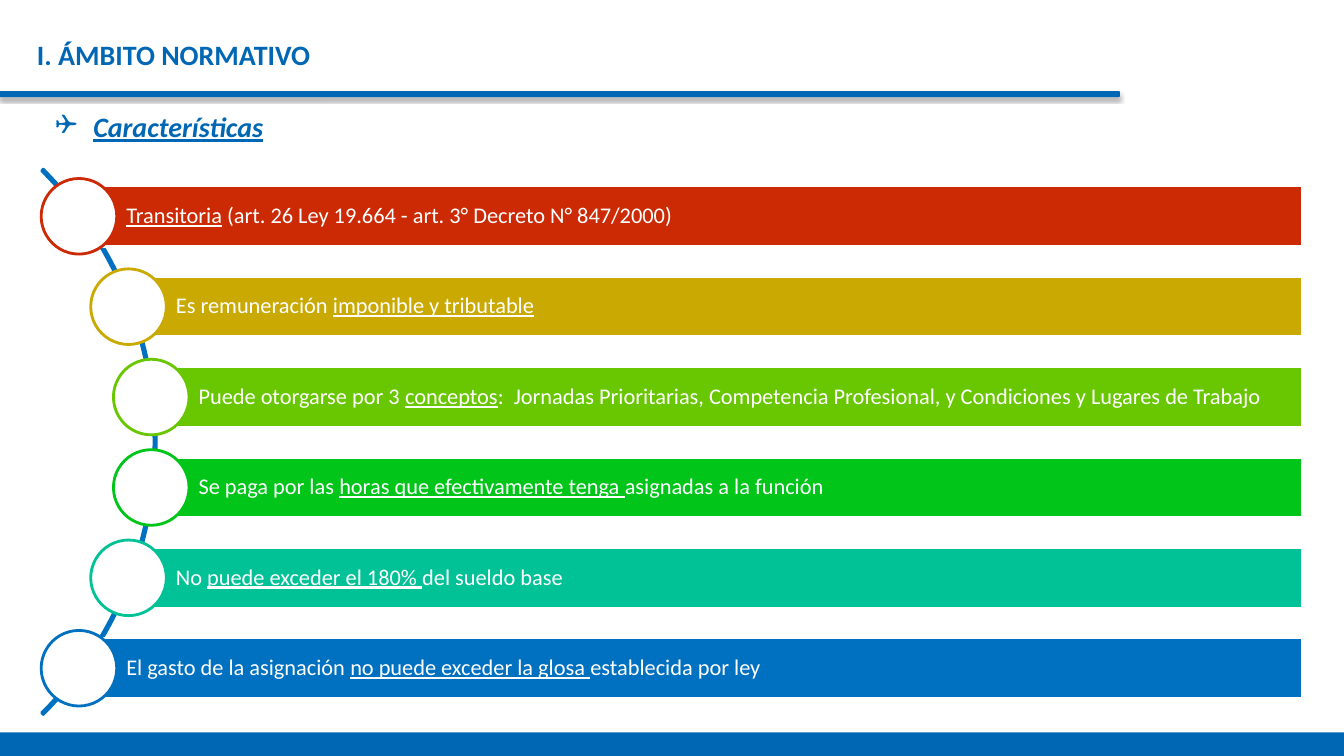
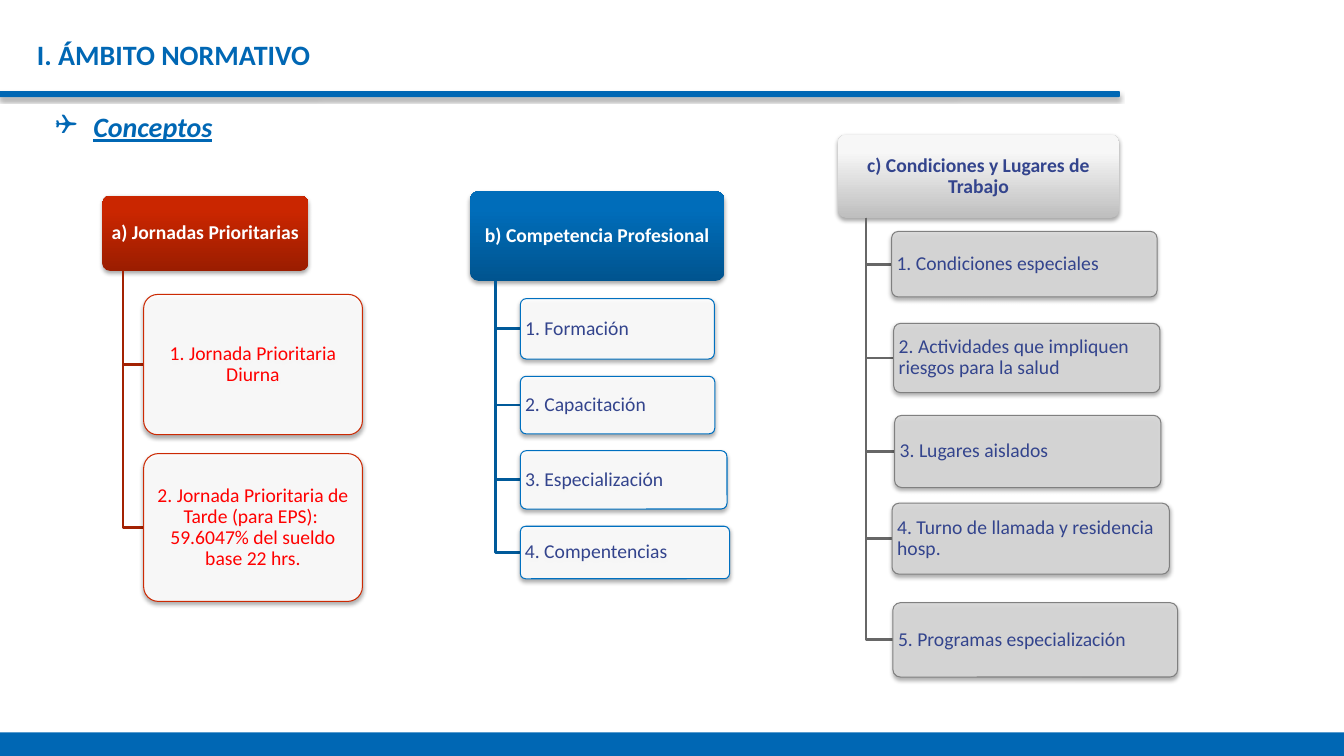
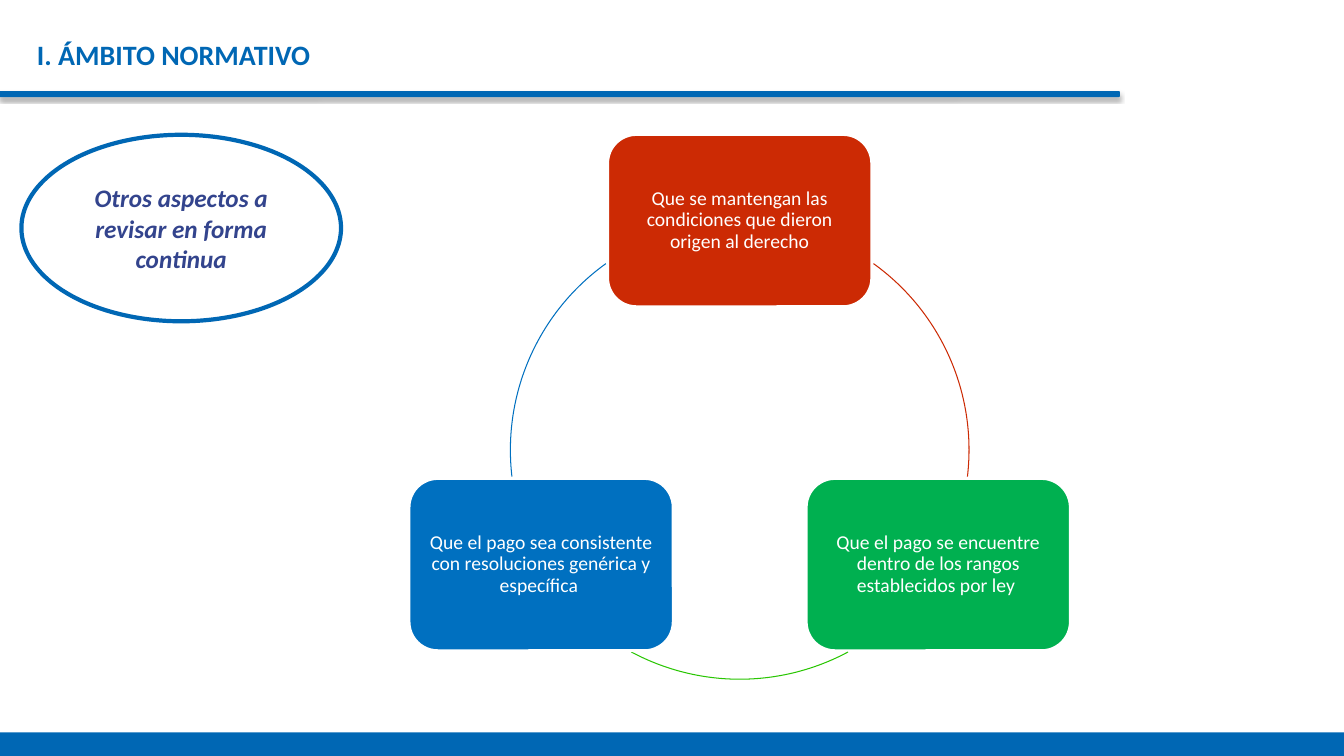
"""Build three slides on the legal framework of an allowance."""
from math import cos, radians, sin

from pptx import Presentation
from pptx.dml.color import RGBColor
from pptx.enum.shapes import MSO_SHAPE
from pptx.enum.text import MSO_ANCHOR, PP_ALIGN
from pptx.oxml import parse_xml
from pptx.oxml.ns import nsdecls, qn
from pptx.util import Inches, Pt

RECT, ROUNDED, OVAL = MSO_SHAPE.RECTANGLE, MSO_SHAPE.ROUNDED_RECTANGLE, MSO_SHAPE.OVAL
ARC, BLOCK_ARC = MSO_SHAPE.ARC, MSO_SHAPE.BLOCK_ARC
LEFT, CENTER = PP_ALIGN.LEFT, PP_ALIGN.CENTER
MIDDLE = MSO_ANCHOR.MIDDLE

COLUMNS, ROWS = 160, 90
CELL = Inches(1 / 12)
BRAND, BLUE, RED, INDIGO, WHITE = "0067B4", "0070C0", "CC2A04", "33448D", "FFFFFF"
ARC_UNIT = 0.6
HEADING = {"size": Pt(20), "bold": True}
SHADOW = (
    f'<a:outerShdw {nsdecls("a")} blurRad="39370" dist="22860" dir="5400000" rotWithShape="0">'
    '<a:srgbClr val="000000"><a:alpha val="35000"/></a:srgbClr></a:outerShdw>'
)


def paint(fill, color):
    if color is None:
        fill.background()
    elif isinstance(color, tuple):
        fill.gradient()
        fill.gradient_angle = 90
        for stop, position, shade in zip(fill.gradient_stops, (0, 0.8), color):
            stop.position = position
            stop.color.rgb = RGBColor.from_string(shade)
    else:
        fill.solid()
        fill.fore_color.rgb = RGBColor.from_string(color)


def block(slide, kind, area, fill=None, line=None, weight=2, adjust=(), shadow=False, opacity=100,
          text="", ink=WHITE, align=LEFT, insets=(0, 0, 0, 0), spacing=0.9, **fmt):
    place = [round(cells * CELL) for cells in area]
    shape = slide.shapes.add_shape(kind, *place) if kind else slide.shapes.add_textbox(*place)
    for index, value in enumerate(adjust):
        shape.adjustments[index] = value
    paint(shape.fill, fill)
    paint(shape.line.fill, line)
    if line:
        shape.line.width = Pt(weight)
    properties = shape._element.spPr
    if opacity < 100:
        tint = properties.find(qn("a:solidFill"))[0]
        tint.append(parse_xml(f'<a:alpha {nsdecls("a")} val="{opacity * 1000}"/>'))
    shape.shadow.inherit = False
    if shadow:
        properties.find(qn("a:effectLst")).append(parse_xml(SHADOW))
    if not text:
        return shape
    frame = shape.text_frame
    frame.word_wrap = True
    frame.vertical_anchor = MIDDLE
    for side, inset in zip(("left", "top", "right", "bottom"), insets):
        setattr(frame, f"margin_{side}", Inches(inset))
    paragraph = frame.paragraphs[0]
    paragraph.alignment = align
    paragraph.line_spacing = spacing
    for index, piece in enumerate(text.split("_")):
        if piece:
            run = paragraph.add_run()
            run.text = piece
            for name, value in {"name": "Calibri", "size": Pt(14), **fmt}.items():
                setattr(run.font, name, value)
            if index % 2:
                run.font.underline = True
            paint(run.font.fill, ink)
    return shape


deck = Presentation()
deck.slide_width, deck.slide_height = COLUMNS * CELL, ROWS * CELL
blank = deck.slide_layouts[6]

slides = []
for topic in ("Características", "Conceptos", None):
    slide = deck.slides.add_slide(blank)
    slides.append(slide)
    block(slide, ROUNDED, (0, 10.9, 133.25, 0.6), BRAND, BRAND, 0.75, (0.12,), shadow=True)
    block(slide, RECT, (0, 87.2, COLUMNS, 2.8), BRAND)
    block(slide, None, (4.4, 4.4, 133.6, 4.1), text="I. ÁMBITO NORMATIVO", ink=BRAND,
          spacing=1.0, **HEADING)
    if topic:
        heading = block(slide, None, (6.55, 13, 133.6, 4.1), text=f"_{topic}_", ink=BRAND,
                        spacing=1.0, italic=True, **HEADING)
        bullet = heading.text_frame.paragraphs[0]._p.get_or_add_pPr()
        bullet.set("marL", str(Inches(0.38)))
        bullet.set("indent", str(-Inches(0.38)))
        bullet.append(parse_xml(f'<a:buFont {nsdecls("a")} typeface="Wingdings" charset="2"/>'))
        bullet.append(parse_xml(f'<a:buChar {nsdecls("a")} char="❑"/>'))

features_slide, concepts_slide, review_slide = slides

FEATURES = [
    (9.4, RED, "_Transitoria_ (art. 26 Ley 19.664 - art. 3° Decreto N° 847/2000)"),
    (15.3, "CAA903", "Es remuneración _imponible y tributable_"),
    (18, "69C702", "Puede otorgarse por 3 _conceptos_:  Jornadas Prioritarias, "
                   "Competencia Profesional, y Condiciones y Lugares de Trabajo"),
    (18, "02C51A", "Se paga por las _horas que efectivamente tenga _asignadas a la función"),
    (15.3, "01C296", "No _puede exceder el 180% _del sueldo base"),
    (9.4, BLUE, "El gasto de la asignación _no puede exceder la glosa _establecida por ley"),
]
BAR_RIGHT, BAR_HEIGHT, BAR_PITCH, CIRCLE = 155.1, 7.2, 10.76, 9
block(features_slide, BLOCK_ARC, (-73.2, 6.7, 91.8, 91.8), line=BLUE,
      adjust=(315 * ARC_UNIT, 45 * ARC_UNIT, 0.003))
for index, (left, color, feature) in enumerate(FEATURES):
    middle = 25.75 + index * BAR_PITCH
    block(features_slide, RECT, (left, middle - BAR_HEIGHT / 2, BAR_RIGHT - left, BAR_HEIGHT),
          color, WHITE, text=feature, insets=(0.47, 0.04, 0.04, 0.04), size=Pt(16))
    block(features_slide, OVAL, (left - CIRCLE / 2, middle - CIRCLE / 2, CIRCLE, CIRCLE), WHITE, color)

CONCEPTS = [
    {"title": "a) Jornadas Prioritarias", "area": (12.2, 23.3, 24.5, 8.95),
     "shades": ("9B1D00", "CA2600"), "title_ink": WHITE, "branch": "A32203",
     "fill": WHITE, "edge": RED, "ink": "FF0000", "align": CENTER,
     "items": [
         ("1. Jornada Prioritaria Diurna", (17.1, 35.05, 26.05, 16.7)),
         ("2. Jornada Prioritaria de Tarde (para EPS):  59.6047% del sueldo base 22 hrs.",
          (17.1, 54, 26.05, 17.6)),
     ]},
    {"title": "b) Competencia Profesional", "area": (55.95, 22.75, 30.3, 10.7),
     "shades": ("00548F", "006DBA"), "title_ink": WHITE, "branch": "005A9A",
     "fill": WHITE, "edge": BLUE, "ink": INDIGO, "align": LEFT,
     "items": [
         ("1. Formación", (61.95, 35.55, 23.1, 7.2)),
         ("2. Capacitación", (61.95, 44.8, 23.15, 6.85)),
         ("3. Especialización", (61.95, 53.65, 24.6, 6.95)),
         ("4. Compentencias", (61.95, 62.65, 24.9, 6.25)),
     ]},
    {"title": "c) Condiciones y Lugares de Trabajo", "area": (99.75, 16.05, 33.5, 9.9),
     "shades": ("BEBEBE", "F7F7F7"), "title_ink": INDIGO, "branch": "676767",
     "fill": "D8D8D8", "edge": "808080", "ink": INDIGO, "align": LEFT,
     "items": [
         ("1. Condiciones especiales", (106.15, 27.55, 31.6, 7.8)),
         ("2. Actividades que impliquen riesgos para la salud", (106.4, 38.5, 31.7, 8.25)),
         ("3. Lugares aislados", (106.5, 49.45, 31.7, 8.6)),
         ("4. Turno de llamada y residencia hosp.", (106.2, 59.9, 33, 8.45)),
         ("5. Programas especialización", (106.3, 71.75, 33.9, 8.85)),
     ]},
]
NODE = {"adjust": (0.1,), "shadow": True, "insets": (0.03, 0.02, 0.03, 0.02)}
for concept in CONCEPTS:
    left, top, width, height = concept["area"]
    block(concepts_slide, ROUNDED, concept["area"], concept["shades"], text=concept["title"],
          ink=concept["title_ink"], align=CENTER, bold=True, **NODE)
    for item, area in concept["items"]:
        trunk, middle = left + width / 10, area[1] + area[3] / 2
        start, corner, end = [
            (round(x * CELL), round(y * CELL))
            for x, y in ((trunk, top + height), (trunk, middle), (area[0], middle))
        ]
        elbow = concepts_slide.shapes.build_freeform(*start)
        elbow.add_line_segments([corner, end], close=False)
        branch = elbow.convert_to_shape()
        paint(branch.fill, None)
        paint(branch.line.fill, concept["branch"])
        branch.line.width = Pt(2)
        branch.shadow.inherit = False
        block(concepts_slide, ROUNDED, area, concept["fill"], concept["edge"], 0.75, opacity=90,
              text=item, ink=concept["ink"], align=concept["align"], **NODE)

CHECKS = [
    (RED, "Que se mantengan las condiciones que dieron origen al derecho", RED, 305.7, 6.7),
    ("00B050", "Que el pago se encuentre dentro de los rangos establecidos por ley ",
     "29C602", 61.8, 118.2),
    (BLUE, "Que el pago sea consistente con resoluciones genérica y específica ", BLUE, 173.3, 234.3),
]
CYCLE_X, CYCLE_Y, RADIUS = 88.06, 53.56, 27.3
CHECK_WIDTH, CHECK_HEIGHT = 31.44, 20.5
for index, (color, check, arc_color, start, end) in enumerate(CHECKS):
    angle = radians(index * 360 / len(CHECKS) - 90)
    left = CYCLE_X + RADIUS * cos(angle) - CHECK_WIDTH / 2
    top = CYCLE_Y + RADIUS * sin(angle) - CHECK_HEIGHT / 2
    block(review_slide, ROUNDED, (left, top, CHECK_WIDTH, CHECK_HEIGHT), color, WHITE,
          text=check, align=CENTER, insets=(0.06, 0.06, 0.06, 0.06))
    block(review_slide, ARC, (CYCLE_X - RADIUS, CYCLE_Y - RADIUS, 2 * RADIUS, 2 * RADIUS),
          line=arc_color, weight=0.75, adjust=(start * ARC_UNIT, end * ARC_UNIT))
block(review_slide, OVAL, (2.55, 16.05, 38.05, 22.2), line=BRAND, weight=3,
      text="Otros aspectos a revisar en forma continua", ink=INDIGO, align=CENTER,
      insets=(0.1, 0.05, 0.1, 0.05), spacing=1.0, size=Pt(18), bold=True, italic=True)

deck.save("out.pptx")
